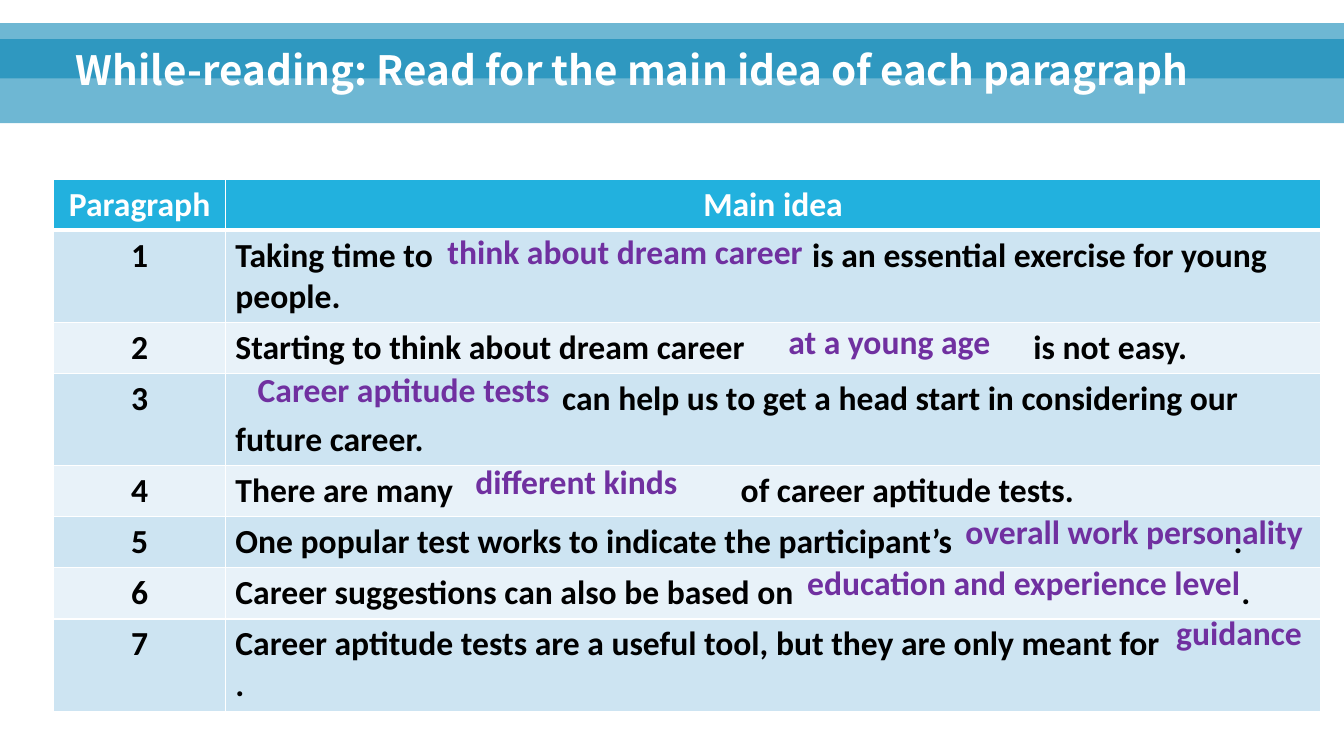
from lxml import etree
from pptx import Presentation
from pptx.dml.color import RGBColor
from pptx.enum import shapes, text
from pptx.oxml import ns
from pptx.util import Pt

# Content
TITLE = "While-reading: Read for the main idea of each paragraph"
HEADERS = ("Paragraph", "Main idea")
# Text before the blank, where the blank ends, text after the blank
IDEAS = [
    ("Taking time to ", 406.5, " is an essential exercise for young people."),
    ("Starting to think about dream career ", 564.5, " is not easy."),
    ("", 228, " can help us to get a head start in considering our future career."),
    ("There are many ", 355.5, " of career aptitude tests."),
    ("One popular test works to indicate the participant’s", 713, "."),
    ("Career suggestions can also be based on", 718.5, "."),
    ("Career aptitude tests are a useful tool, but they are only meant for", 763, "."),
]
# Answer, left, top, width
ANSWERS = [
    ("think about dream career", 312.5, 161.5, 300),
    ("at a young age", 556, 226, 201.5),
    ("Career aptitude tests", 177, 260, 480),
    ("different kinds", 332.5, 326, 480),
    ("overall work personality", 682.5, 361.5, 261.5),
    ("education and experience level", 569.5, 398, 350),
    ("guidance", 833, 433.5, 126),
]
BANDS = [(28, 60), (16.5, 39.5)]  # top, height
COLUMN_WIDTHS = (122.5, 782.5)
ROW_HEIGHT = 29.5
COLORS = {"band": "0082B3", "header": "22B1DE", "odd": "CDE4F2", "even": "E8F2F9",
          "white": "FFFFFF", "black": "000000", "answer": "7030A0"}


def color(name):
    return RGBColor.from_string(COLORS[name])


def format_font(paragraph, color_name, size=24, name="Calibri"):
    font = paragraph.font
    font.name, font.size, font.bold = name, Pt(size), True
    font.color.rgb = color(color_name)


def add_border(cell, side, width):
    line = etree.SubElement(cell._tc.get_or_add_tcPr(), ns.qn("a:" + side), w=str(Pt(width)))
    fill = etree.SubElement(line, ns.qn("a:solidFill"))
    etree.SubElement(fill, ns.qn("a:srgbClr"), val=COLORS["white"])


def format_cell(cell, fill_name, top=1, bottom=1):
    for side, width in (("lnL", 1), ("lnR", 1), ("lnT", top), ("lnB", bottom)):
        add_border(cell, side, width)
    cell.fill.solid()
    cell.fill.fore_color.rgb = color(fill_name)


def add_blank_sentence(paragraph, before, blank_end, after):
    properties = paragraph._p.get_or_add_pPr()
    tabs = etree.SubElement(properties, ns.qn("a:tabLst"))
    etree.SubElement(tabs, ns.qn("a:tab"), pos=str(Pt(blank_end)), algn="l")
    for words in (before, "\t", after):
        if words:
            run = paragraph.add_run()
            run.text = words
            if words == "\t":
                run.font.underline = True


presentation = Presentation()
presentation.slide_width, presentation.slide_height = Pt(960), Pt(540)
slide = presentation.slides.add_slide(presentation.slide_layouts[5])

# Translucent bands behind the title
for top, height in BANDS:
    band = slide.shapes.add_shape(shapes.MSO_SHAPE.RECTANGLE, 0, Pt(top), Pt(960), Pt(height))
    band.shadow.inherit = False
    band.line.fill.background()
    band.fill.solid()
    band.fill.fore_color.rgb = color("band")
    shade = band._element.spPr.find(".//" + ns.qn("a:srgbClr"))
    etree.SubElement(shade, ns.qn("a:alpha"), val="57000")

# Title, brought in front of the bands
title = slide.shapes.title
slide.shapes._spTree.append(title._element)
title.left, title.top, title.width, title.height = Pt(47), Pt(8.5), Pt(862.5), Pt(62.5)
title.text_frame.text = TITLE
title.text_frame.vertical_anchor = text.MSO_ANCHOR.BOTTOM
title.text_frame.auto_size = text.MSO_AUTO_SIZE.NONE
heading = title.text_frame.paragraphs[0]
heading.alignment = text.PP_ALIGN.LEFT
heading.line_spacing = 0.9
format_font(heading, "white", 28.8, "Noto Sans CJK SC")

# Table of main ideas
row_count = len(IDEAS) + 1
frame = slide.shapes.add_table(row_count, 2, Pt(38.5), Pt(128), Pt(sum(COLUMN_WIDTHS)),
                               Pt(ROW_HEIGHT * row_count))
table = frame.table
table.horz_banding = False
for column, width in zip(table.columns, COLUMN_WIDTHS):
    column.width = Pt(width)
frame.height = Pt(345.5)

for index, header in enumerate(HEADERS):
    cell = table.cell(0, index)
    cell.text = header
    format_cell(cell, "header", bottom=3)
    cell.text_frame.paragraphs[0].alignment = text.PP_ALIGN.CENTER
    format_font(cell.text_frame.paragraphs[0], "white")

for number, idea in enumerate(IDEAS, 1):
    number_cell, idea_cell = table.cell(number, 0), table.cell(number, 1)
    number_cell.text = str(number)
    number_cell.text_frame.paragraphs[0].alignment = text.PP_ALIGN.CENTER
    add_blank_sentence(idea_cell.text_frame.paragraphs[0], *idea)
    for cell in (number_cell, idea_cell):
        format_cell(cell, "odd" if number % 2 else "even", top=3 if number == 1 else 1)
        format_font(cell.text_frame.paragraphs[0], "black")

# Answers over the blanks
for answer, left, top, width in ANSWERS:
    box = slide.shapes.add_textbox(Pt(left), Pt(top), Pt(width), Pt(36))
    box.text_frame.word_wrap = True
    box.text_frame.text = answer
    format_font(box.text_frame.paragraphs[0], "answer")

presentation.save("out.pptx")
